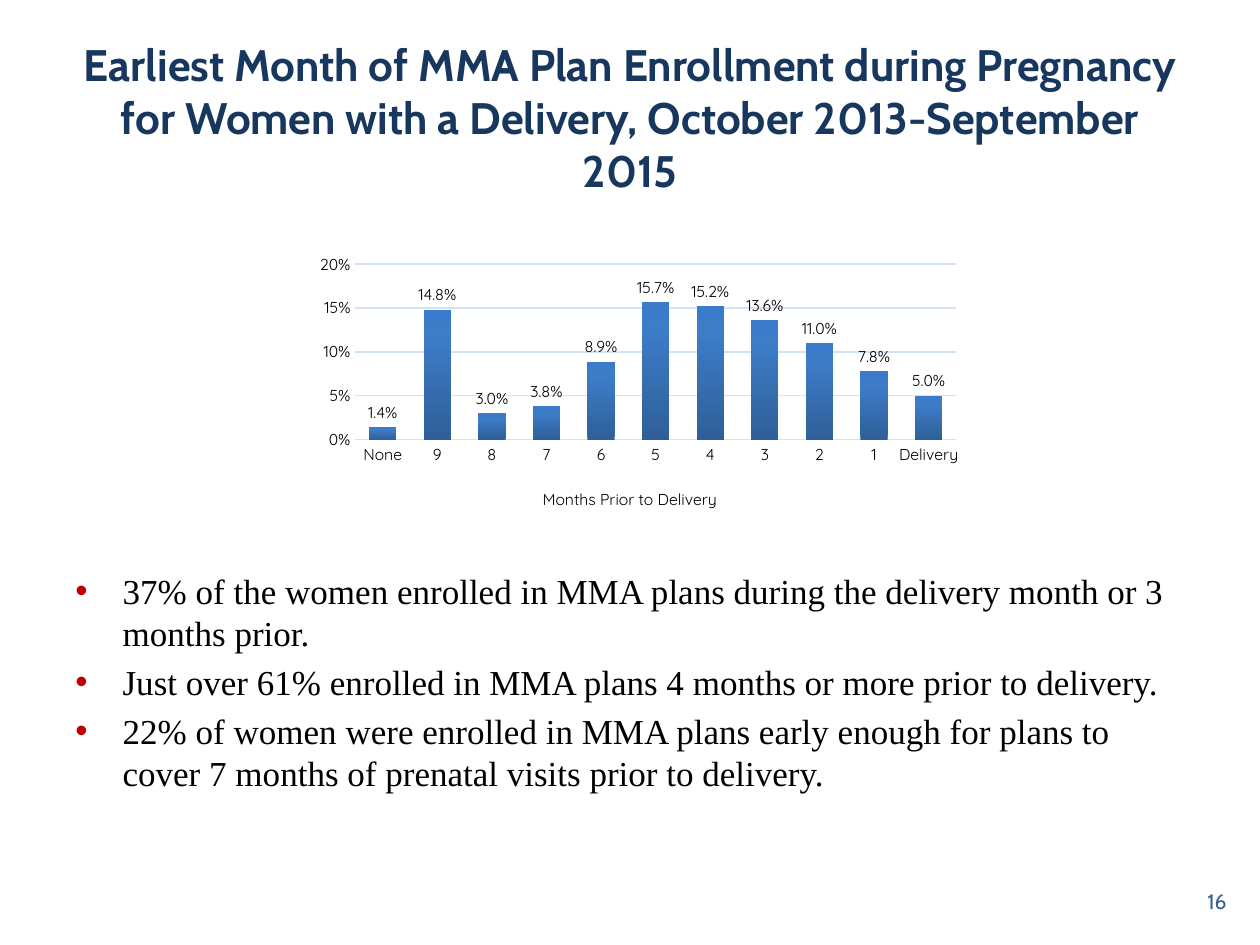
from copy import deepcopy

from lxml import etree
from pptx import Presentation
from pptx.chart.data import CategoryChartData
from pptx.dml.color import RGBColor
from pptx.enum.chart import XL_CHART_TYPE as ChartType, XL_LABEL_POSITION as LabelPosition, XL_TICK_MARK as TickMark
from pptx.enum.text import MSO_ANCHOR as Anchor, PP_ALIGN as Align
from pptx.oxml.ns import qn
from pptx.util import Pt

rgb = RGBColor.from_string


def set_font(font, name, size, color, bold=False):
    font.name, font.size, font.bold = name, Pt(size), bold
    font.color.rgb = rgb(color)


def set_layout(parent, index, **settings):
    """Place a chart element by hand, in fractions of the chart's size."""
    for old in parent.findall(qn("c:layout")):
        parent.remove(old)
    layout = etree.Element(qn("c:layout"))
    manual = etree.SubElement(layout, qn("c:manualLayout"))
    for tag, value in settings.items():
        etree.SubElement(manual, qn(f"c:{tag}")).set("val", str(value))
    parent.insert(index, layout)


prs = Presentation()
prs.slide_width, prs.slide_height = Pt(720), Pt(540)
slide = prs.slides.add_slide(prs.slide_layouts[6])

# Title and page number
headings = [
    ("Earliest Month of MMA Plan Enrollment during Pregnancy for Women with a Delivery, "
     "October 2013-September 2015", (36, 22, 648, 90), Align.CENTER, 25.2, "17375E", True),
    ("16", (540, 500.4, 168, 28.8), Align.RIGHT, 12, "376092", False),
]
for wording, place, align, size, color, bold in headings:
    frame = slide.shapes.add_textbox(*map(Pt, place)).text_frame
    frame.word_wrap = True
    frame.vertical_anchor = Anchor.MIDDLE
    heading = frame.paragraphs[0]
    heading.text, heading.alignment = wording, align
    set_font(heading.font, "Cabin", size, color, bold)

# Enrollment chart
enrollment = CategoryChartData(number_format="0.0%")
enrollment.categories = ["None", *"987654321", "Delivery"]
enrollment.add_series("Series 1", [0.014, 0.148, 0.03, 0.038, 0.089, 0.157,
                                   0.152, 0.136, 0.11, 0.078, 0.05])
chart = slide.shapes.add_chart(ChartType.COLUMN_CLUSTERED, Pt(168), Pt(138),
                               Pt(390), Pt(162), enrollment).chart
chart.has_legend = chart.has_title = False
set_font(chart.font, "Quicksand", 10, "000000")

months, share = chart.category_axis, chart.value_axis
for axis in (months, share):
    axis.major_tick_mark = axis.minor_tick_mark = TickMark.NONE
    set_font(axis.tick_labels.font, "Quicksand", 9, "000000")
share.minimum_scale, share.maximum_scale, share.major_unit = 0, 0.2, 0.05
share.tick_labels.number_format = "0%"
share.tick_labels.number_format_is_linked = False
share.format.line.fill.background()
for line in (months.format.line, share.major_gridlines.format.line):
    line.color.rgb = rgb("D4E3F4")
    line.width = Pt(0.75)

months_title = months.axis_title.text_frame.paragraphs[0]
months_title.text = "Months Prior to Delivery"
set_font(months_title.font, "Quicksand", 9, "000000")

chart_xml = chart._chartSpace
set_layout(chart_xml.xpath(".//c:plotArea")[0], 0, layoutTarget="inner", xMode="edge",
           yMode="edge", x=0.09, y=0.08, w=0.88, h=0.62)
set_layout(chart_xml.xpath(".//c:catAx/c:title")[0], 1, xMode="edge", yMode="edge",
           x=0.36, y=0.86)

plot = chart.plots[0]
plot.vary_by_categories = False
plot.gap_width, plot.overlap = 100, -24
plot.has_data_labels = True
labels = plot.data_labels
labels.show_value, labels.position = True, LabelPosition.OUTSIDE_END
labels.number_format, labels.number_format_is_linked = "0.0%", False
set_font(labels.font, "Quicksand", 9, "000000")

bar_fill = plot.series[0].format.fill
bar_fill.gradient()
bar_fill.gradient_angle = 90
stop_list = chart_xml.xpath(".//c:ser//a:gsLst")[0]
stop_list.append(deepcopy(stop_list[-1]))
shades = [(0, "2F5F99"), (0.8, "3D7CC7"), (1, "3A7CCB")]
for stop, (position, color) in zip(bar_fill.gradient_stops, shades):
    stop.position = position
    stop.color.rgb = rgb(color)

# Findings
findings = [
    "37% of the women enrolled in MMA plans during the delivery month or 3 months prior.",
    "Just over 61% enrolled in MMA plans 4 months or more prior to delivery.",
    "22% of women were enrolled in MMA plans early enough for plans to cover 7 months "
    "of prenatal visits prior to delivery.",
]
frame = slide.shapes.add_textbox(Pt(36), Pt(322), Pt(648), Pt(160)).text_frame
frame.word_wrap = True
for number, finding in enumerate(findings):
    paragraph = frame.add_paragraph() if number else frame.paragraphs[0]
    paragraph.text = finding
    paragraph.line_spacing = Pt(24)
    paragraph.space_before = Pt(4 if number else 0)
    properties = paragraph._p.get_or_add_pPr()
    properties.set("marL", str(Pt(27)))
    properties.set("indent", str(-Pt(27)))
    bullet_color = etree.SubElement(properties, qn("a:buClr"))
    etree.SubElement(bullet_color, qn("a:srgbClr")).set("val", "C00000")
    etree.SubElement(properties, qn("a:buFont")).set("typeface", "Arial")
    etree.SubElement(properties, qn("a:buChar")).set("char", "•")
    set_font(paragraph.font, "Times New Roman", 20, "000000")

prs.save("out.pptx")
